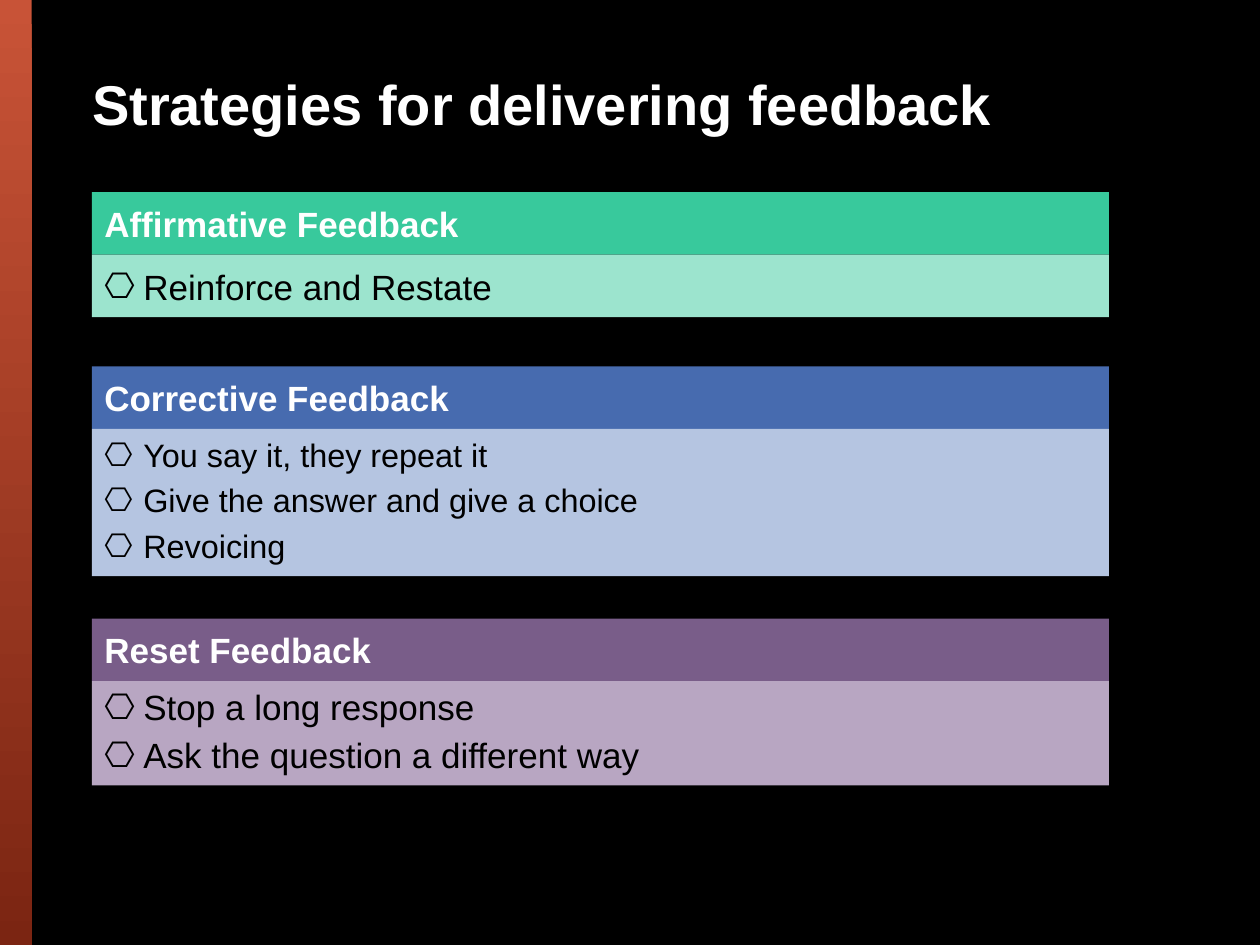
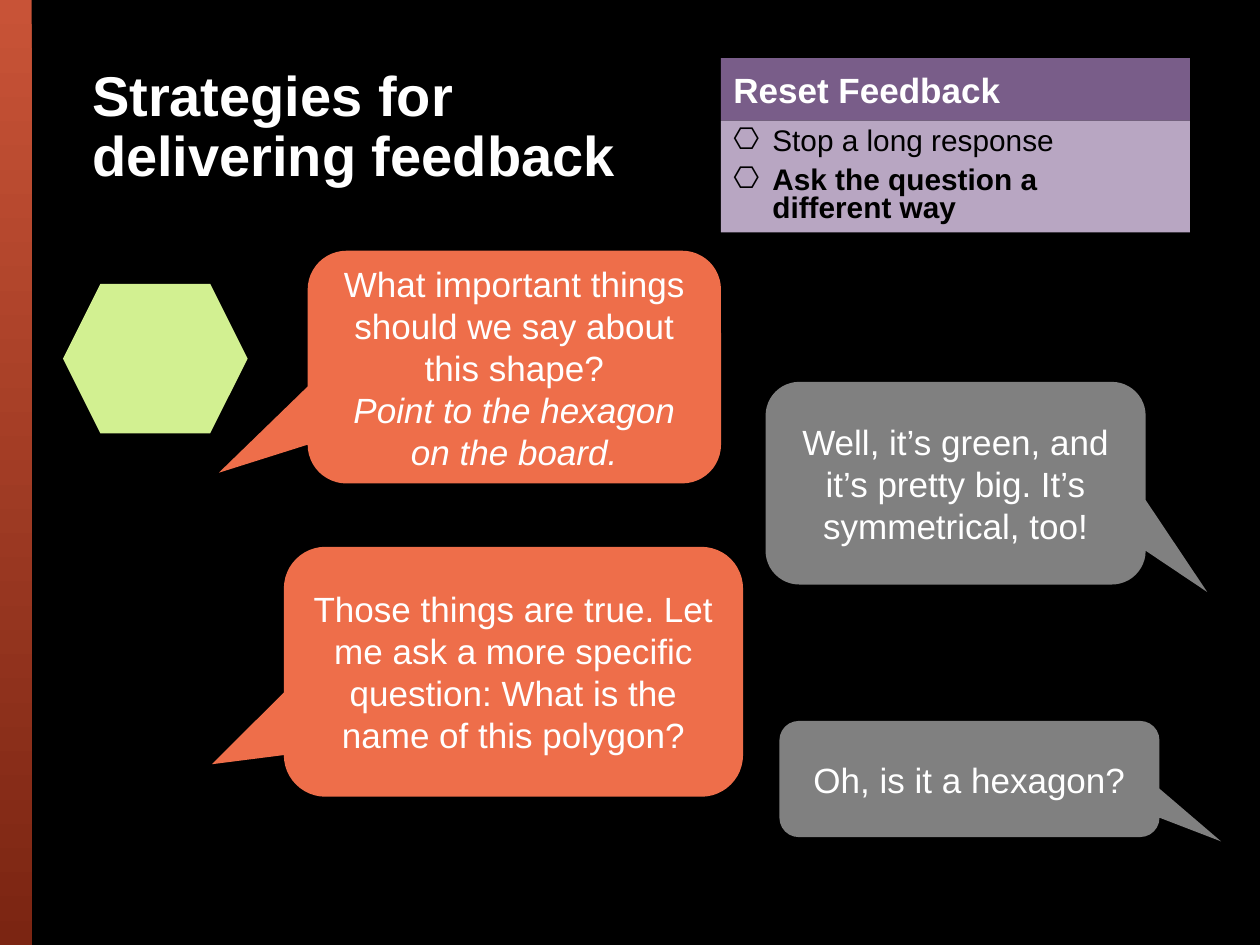
from dataclasses import dataclass

from lxml.etree import SubElement
from pptx import Presentation
from pptx.dml.color import RGBColor
from pptx.enum.shapes import MSO_SHAPE
from pptx.enum.text import MSO_ANCHOR, MSO_AUTO_SIZE, PP_ALIGN
from pptx.oxml.ns import qn
from pptx.presentation import Presentation as PresentationType
from pptx.shapes.autoshape import Shape
from pptx.slide import Slide
from pptx.text.text import _Paragraph as Paragraph
from pptx.util import Pt

FONT = "Arial"
COLORS = {
    "background": "000000",
    "white": "FFFFFF",
    "black": "000000",
    "band_top": "C85337",
    "band_bottom": "7B2512",
    "affirmative": "38C99C",
    "affirmative_light": "9CE4CE",
    "corrective": "476BAF",
    "corrective_light": "B5C5E1",
    "reset": "795D89",
    "reset_light": "B8A6C2",
    "teacher": "EE6E4A",
    "student": "808080",
    "hexagon": "D2F091",
}
TITLE = "Strategies for delivering feedback"
TITLE_LEFT, TITLE_TOP = 45.4, 25.2
BAND_WIDTH = 18.2
HEADER_HEIGHT = 35.75
BULLET_INDENT = 22.3
TEXT_SIZE = 20


@dataclass(frozen=True)
class Box:
    left: float
    top: float
    width: float
    height: float


@dataclass(frozen=True)
class FeedbackCard:
    kind: str
    strategies: tuple[str, ...]
    left: float
    top: float
    width: float
    body_height: float
    text_size: float = TEXT_SIZE
    line_spacing: float = 0.9
    highlighted: int | None = None


@dataclass(frozen=True)
class SpeechBubble:
    speaker: str
    box: Box
    pointer: tuple[float, float]
    speech: str
    action: str = ""


OVERVIEW_CARDS = [
    FeedbackCard("affirmative", ("Reinforce and Restate",), 52.5, 109.8, 581.2, 35.75,
                 line_spacing=1),
    FeedbackCard("corrective",
                 ("You say it, they repeat it", "Give the answer and give a choice", "Revoicing"),
                 52.5, 209.3, 581.2, 84.2, text_size=18.5),
    FeedbackCard("reset", ("Stop a long response", "Ask the question a different way"),
                 52.5, 353.5, 581.2, 59.6),
]
RESET_CARD = FeedbackCard("reset", ("Stop a long response", "Ask the question a\vdifferent way"),
                          412, 33.2, 268, 63.9, text_size=17, line_spacing=0.8, highlighted=1)
STUDENT_POINTER = (0.662, 0.537)
BUBBLES = [
    SpeechBubble("teacher", Box(175.8, 143.3, 236.2, 133), (-0.715, 0.454),
                 "What important things should we say about this shape?",
                 "Point to the hexagon on the board."),
    SpeechBubble("teacher", Box(162.2, 312.5, 262.4, 142.8), (-0.657, 0.37),
                 "Those things are true. Let me ask a more specific question: "
                 "What is the name of this polygon?"),
    SpeechBubble("student", Box(437.5, 218.2, 217.2, 115.8), STUDENT_POINTER,
                 "Well, it’s green, and it’s pretty big. It’s symmetrical, too!"),
    SpeechBubble("student", Box(445.4, 412, 217.2, 66.4), STUDENT_POINTER,
                 "Oh, is it a hexagon?"),
]


def color(name: str) -> RGBColor:
    return RGBColor.from_string(COLORS[name])


def add_filled_shape(slide: Slide, preset: MSO_SHAPE, box: Box, fill: str) -> Shape:
    shape = slide.shapes.add_shape(preset, Pt(box.left), Pt(box.top), Pt(box.width), Pt(box.height))
    shape.shadow.inherit = False
    shape.fill.solid()
    shape.fill.fore_color.rgb = color(fill)
    shape.line.fill.background()
    shape.text_frame.word_wrap = True
    shape.text_frame.vertical_anchor = MSO_ANCHOR.MIDDLE
    return shape


def format_paragraph(paragraph: Paragraph, size: float, text_color: str, bold: bool = False,
                     italic: bool = False, alignment: PP_ALIGN = PP_ALIGN.LEFT) -> None:
    paragraph.alignment = alignment
    for run in paragraph.runs:
        run.font.name = FONT
        run.font.size = Pt(size)
        run.font.bold = bold
        run.font.italic = italic
        run.font.color.rgb = color(text_color)


def add_hexagon_bullet(paragraph: Paragraph) -> None:
    properties = paragraph._p.get_or_add_pPr()
    properties.set("marL", str(Pt(BULLET_INDENT)))
    properties.set("indent", str(-Pt(BULLET_INDENT)))
    SubElement(properties, qn("a:buFont")).set("typeface", FONT)
    SubElement(properties, qn("a:buChar")).set("char", "⎔")


def add_card(slide: Slide, card: FeedbackCard) -> None:
    header_box = Box(card.left, card.top, card.width, HEADER_HEIGHT)
    header = add_filled_shape(slide, MSO_SHAPE.RECTANGLE, header_box, card.kind)
    header.text_frame.text = f"{card.kind.capitalize()} Feedback"
    format_paragraph(header.text_frame.paragraphs[0], TEXT_SIZE, "white", bold=True)

    body_box = Box(card.left, card.top + HEADER_HEIGHT, card.width, card.body_height)
    body = add_filled_shape(slide, MSO_SHAPE.RECTANGLE, body_box, f"{card.kind}_light")
    body.text_frame.text = "\n".join(card.strategies)
    for index, paragraph in enumerate(body.text_frame.paragraphs):
        add_hexagon_bullet(paragraph)
        paragraph.line_spacing = card.line_spacing
        if index:
            paragraph.space_before = Pt(6)
        format_paragraph(paragraph, card.text_size, "black", bold=index == card.highlighted)


def add_bubble(slide: Slide, bubble: SpeechBubble) -> None:
    shape = add_filled_shape(slide, MSO_SHAPE.ROUNDED_RECTANGULAR_CALLOUT, bubble.box,
                             bubble.speaker)
    shape.adjustments[0], shape.adjustments[1] = bubble.pointer
    shape.text_frame.text = bubble.speech
    if bubble.action:
        shape.text_frame.add_paragraph().text = bubble.action
    for index, paragraph in enumerate(shape.text_frame.paragraphs):
        format_paragraph(paragraph, TEXT_SIZE, "white", italic=index > 0,
                         alignment=PP_ALIGN.CENTER)


def add_titled_slide(presentation: PresentationType, title_width: float,
                     title_height: float) -> Slide:
    """Add a slide with the gradient band at the left and the shared title."""
    slide = presentation.slides.add_slide(presentation.slide_layouts.get_by_name("Title Only"))
    band_box = Box(0, 0, BAND_WIDTH, 540)
    band = add_filled_shape(slide, MSO_SHAPE.RECTANGLE, band_box, "band_top")
    band.fill.gradient()
    band.fill.gradient_angle = 270
    for stop, name in zip(band.fill.gradient_stops, ("band_top", "band_bottom")):
        stop.color.rgb = color(name)

    title = slide.shapes.title
    title.left, title.top = Pt(TITLE_LEFT), Pt(TITLE_TOP)
    title.width, title.height = Pt(title_width), Pt(title_height)
    title.text_frame.text = TITLE
    title.text_frame.word_wrap = True
    title.text_frame.auto_size = MSO_AUTO_SIZE.NONE
    title.text_frame.vertical_anchor = MSO_ANCHOR.MIDDLE
    paragraph = title.text_frame.paragraphs[0]
    paragraph.line_spacing = 0.9
    format_paragraph(paragraph, 32, "white", bold=True)
    return slide


def add_overview_slide(presentation: PresentationType) -> None:
    slide = add_titled_slide(presentation, 644.4, 72)
    for card in OVERVIEW_CARDS:
        add_card(slide, card)


def add_dialogue_slide(presentation: PresentationType) -> None:
    slide = add_titled_slide(presentation, 366.5, 96.5)
    add_card(slide, RESET_CARD)
    add_filled_shape(slide, MSO_SHAPE.HEXAGON, Box(36, 162.2, 105.5, 85.5), "hexagon")
    for bubble in BUBBLES:
        add_bubble(slide, bubble)


def main() -> None:
    presentation = Presentation()
    presentation.slide_width, presentation.slide_height = Pt(720), Pt(540)
    background = presentation.slide_master.background.fill
    background.solid()
    background.fore_color.rgb = color("background")
    add_overview_slide(presentation)
    add_dialogue_slide(presentation)
    presentation.save("out.pptx")


if __name__ == "__main__":
    main()
